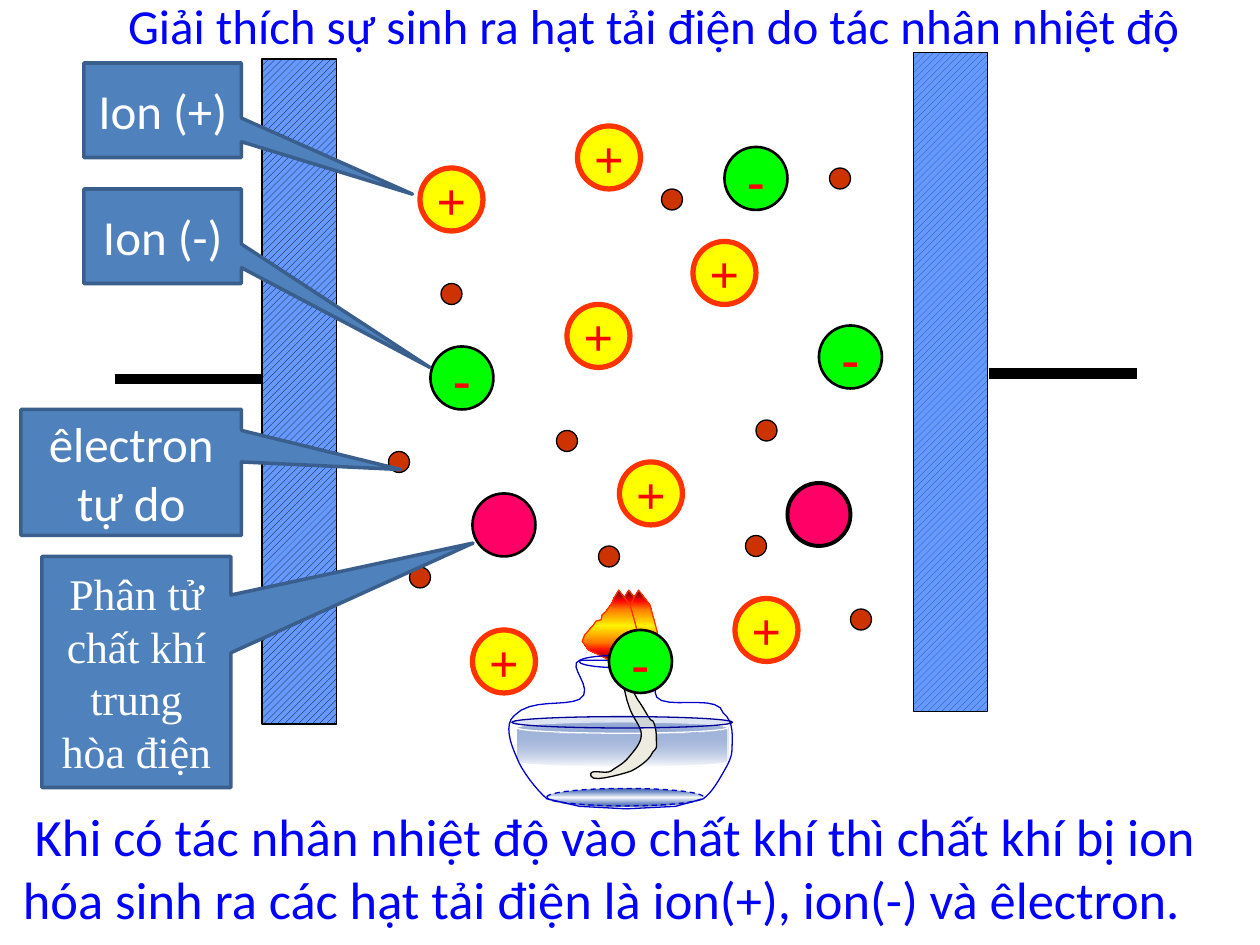
import pptx
import pptx.util
import pptx.dml.color
import pptx.enum.dml
import pptx.enum.shapes
import pptx.enum.text
import pptx.oxml.ns
import lxml.etree

Pt = pptx.util.Pt
qn = pptx.oxml.ns.qn
kinds = pptx.enum.shapes.MSO_SHAPE
mid = pptx.enum.text.MSO_ANCHOR.MIDDLE
top = pptx.enum.text.MSO_ANCHOR.TOP
left = pptx.enum.text.PP_ALIGN.LEFT
center = pptx.enum.text.PP_ALIGN.CENTER


def hue(code):
    return pptx.dml.color.RGBColor.from_string(code)


def paint(shape, fill, line, width):
    """Fill is a hex string, None, or a list of (position, hex, opacity) stops."""
    shape.shadow.inherit = False
    if fill is None:
        shape.fill.background()
    elif isinstance(fill, str):
        shape.fill.solid()
        shape.fill.fore_color.rgb = hue(fill)
    else:
        shape.fill.gradient()
        shape.fill.gradient_angle = 270
        stops = shape._element.spPr.find(qn("a:gradFill")).find(qn("a:gsLst"))
        for old in list(stops):
            stops.remove(old)
        for spot, code, alpha in fill:
            stop = lxml.etree.SubElement(stops, qn("a:gs"), pos=str(spot * 1000))
            tint = lxml.etree.SubElement(stop, qn("a:srgbClr"), val=code)
            lxml.etree.SubElement(tint, qn("a:alpha"), val=str(alpha * 1000))
    shape.line.color.rgb = hue(line)
    shape.line.width = Pt(width)


deck = pptx.Presentation()
deck.slide_width, deck.slide_height = Pt(720), Pt(540)
slide = deck.slides.add_slide(deck.slide_layouts[5])
shapes = slide.shapes
texts = []  # shape, text, font, size, colour, bold, wrap, anchor, align

# Title
title = shapes.title
spots = {"left": 66, "top": -6, "width": 622, "height": 41}
for name, value in spots.items():
    setattr(title, name, Pt(value))
texts.append((title, "Giải thích sự sinh ra hạt tải điện do tác nhân nhiệt độ",
              "Calibri", 28, "0000FF", False, False, top, left))

# Plates and their wires
for x, y, high, ink, start, level in [
        (149.75, 33.75, 380, "000000", 65.5, 216.5),
        (522, 30, 376.5, "1F497D", 565, 213.5)]:
    plate = shapes.add_shape(kinds.RECTANGLE, Pt(x), Pt(y), Pt(42.5), Pt(high))
    paint(plate, "6699FF", "000000", 0.75)
    plate.fill.patterned()
    plate.fill.pattern = pptx.enum.dml.MSO_PATTERN.WIDE_UPWARD_DIAGONAL
    plate.fill.fore_color.rgb = hue(ink)
    plate.fill.back_color.rgb = hue("6699FF")
    wire = shapes.add_connector(pptx.enum.shapes.MSO_CONNECTOR.STRAIGHT,
                                Pt(start), Pt(level), Pt(start + 84.5), Pt(level))
    wire.line.color.rgb = hue("000000")
    wire.line.width = Pt(6)
    lxml.etree.SubElement(wire._element.spPr, qn("a:effectLst"))

# Lamp: liquid and base
liquid = shapes.add_shape(kinds.CAN, Pt(295), Pt(412.5), Pt(121), Pt(26))
paint(liquid, [(0, "003399", 40), (100, "FFFFFF", 100)], "FFFFFF", 0.75)
base = shapes.add_shape(kinds.OVAL, Pt(312.5), Pt(450.5), Pt(89.5), Pt(10))
paint(base, [(0, "003399", 76), (50, "FFFFFF", 100), (100, "003399", 76)],
      "0000CC", 0.75)
base.line.dash_style = pptx.enum.dml.MSO_LINE.DASH

# Lamp: glass and wick; two numbers are a line, six a Bézier curve
glass = [
    (331.2, 377.3), (323.3, 380.2, 340.6, 393.8, 331.2, 399.6),
    (322.6, 403.9, 303.1, 398.9, 293.8, 409), (288, 414, 291.6, 424.8, 295.2, 432.7),
    (298.1, 440.6, 306.7, 451.4, 312.5, 456.5), (331.2, 460.8), (357.8, 462.2),
    (385.9, 460.8), (401.8, 456.5), (406.8, 452.9, 410.4, 446.4, 413.3, 441.4),
    (416.2, 436.3, 418.3, 432.7, 418.3, 427.7),
    (418.3, 421.9, 419.8, 412.6, 413.3, 407.5),
    (411.1, 397.4, 388.1, 403.9, 378, 400.3), (367.9, 396.7, 383, 380.9, 375.8, 377.3)]
wick = [
    (354.2, 373), (353.5, 373.7, 356.4, 396, 359.3, 403.2),
    (361.4, 410.4, 366.5, 414.7, 366.5, 419.8), (366.5, 424.8, 362.2, 429.1, 359.3, 432.7),
    (355.7, 437, 352.8, 437.8, 349.2, 440.6), (345.6, 442.8, 336.2, 438.5, 337.7, 443.5),
    (339.1, 447.8, 360.7, 440.6, 360.7, 440.6), (360.7, 440.6, 370.8, 435.6, 373, 429.8),
    (375.8, 427, 375.1, 427, 375.1, 423.4), (375.1, 420.5, 375.1, 415.4, 373, 411.8),
    (371.5, 412.6, 368.6, 405.4, 364.3, 399.6), (360, 393.1, 355, 373, 354.2, 373)]
# Flame outline, from its own top left corner
flame = [
    (17.3, 41.8), (12.2, 38.9), (4.3, 35.3), (0.7, 30.2), (2.2, 26.6), (7.2, 20.9),
    (8.6, 18.7), (11.5, 18), (12.2, 15.1), (14.4, 13), (18, 7.9), (18.7, 5.8),
    (21.6, 1), (28.1, 9.4), (32.4, 25.2), (31, 33.8), (20.9, 38.2)]
fire = [(0, "4D0808", 100), (15, "FF0300", 100), (27, "FF7A00", 100),
        (50, "FFF200", 100), (73, "FF7A00", 100), (85, "FF0300", 100),
        (100, "4D0808", 100)]
parts = [(glass, None, "0000CC"), (wick, "EEECE1", "000000")]
for x in (337.7, 343.3, 332):
    parts.append(([(x + a, 336.2 + b) for a, b in flame], fire, "FF3300"))

for steps, fill, line in parts:
    dots = [steps[0]]
    for step in steps[1:]:
        if len(step) == 2:
            dots.append(step)
            continue
        ends = [dots[-1], step[:2], step[2:4], step[4:]]
        for n in range(1, 9):
            t = n / 8
            rates = [(1 - t) ** 3, 3 * t * (1 - t) ** 2, 3 * t * t * (1 - t), t ** 3]
            dots.append(tuple(sum(r * e[k] for r, e in zip(rates, ends))
                              for k in (0, 1)))
    # The pen keeps whole units only, so it draws in full-resolution lengths
    dots = [(Pt(x), Pt(y)) for x, y in dots]
    pen = shapes.build_freeform(*dots[0])
    pen.add_line_segments(dots[1:], close=True)
    paint(pen.convert_to_shape(), fill, line, 0.75)

# Lamp: rim and surface
rim = shapes.add_shape(kinds.OVAL, Pt(331), Pt(374.5), Pt(45.5), Pt(7))
paint(rim, None, "0000CC", 0.75)
skin = shapes.add_shape(kinds.OVAL, Pt(292.5), Pt(409.5), Pt(126), Pt(6.5))
paint(skin, [(0, "003399", 13), (100, "003399", 13)], "000099", 0.75)

# Free electrons
for x, y in [(234, 324), (252, 162), (378, 108), (222, 258), (432, 240),
             (426, 306), (486, 348), (342, 312), (318, 246), (474, 96)]:
    dot = shapes.add_shape(kinds.FLOWCHART_CONNECTOR, Pt(x), Pt(y), Pt(12), Pt(12))
    paint(dot, "CC3300", "000000", 0.75)

# Neutral molecules, positive ions, negative ions
for sign, fill, line, width, places in [
        ("", "FF0066", "000000", 1.5, [(270, 282)]),
        ("", "FF0066", "000000", 2.25, [(450, 276)]),
        ("+", "FFFF00", "FF3300", 3,
         [(420, 342), (240, 96), (354, 264), (270, 360), (324, 174), (330, 72),
          (396, 138)]),
        ("-", "00FF00", "000000", 1.5, [(246, 198), (348, 360), (468, 186), (414, 84)])]:
    for x, y in places:
        ball = shapes.add_shape(kinds.OVAL, Pt(x), Pt(y), Pt(36), Pt(36))
        paint(ball, fill, line, width)
        if sign:
            texts.append((ball, sign, "Times New Roman", 30, "FF0000", True, False,
                          mid, center))

# Conclusion
note = shapes.add_textbox(Pt(6), Pt(456), Pt(720), Pt(80))
texts.append((note, " Khi có tác nhân nhiệt độ vào chất khí thì chất khí bị ion hóa sinh ra "
              "các hạt tải điện là ion(+), ion(-) và êlectron.",
              "Calibri", 30, "0000FF", False, True, top, left))

# Callouts
for text, font, size, box, tip in [
        ("Phân tử chất khí trung hòa điện", "Times New Roman", 25,
         (24, 318, 108, 132), (1.781, -0.558)),
        ("êlectron tự do", "Calibri", 28, (12, 234, 126, 72), (1.223, -0.023)),
        ("Ion (+)", "Calibri", 28, (48, 36, 90, 54), (1.586, 0.888)),
        ("Ion (-)", "Calibri", 28, (48, 108, 90, 54), (1.696, 1.388))]:
    call = shapes.add_shape(kinds.RECTANGULAR_CALLOUT, *[Pt(v) for v in box])
    call.adjustments[0], call.adjustments[1] = tip
    paint(call, "4F81BD", "3A5F8C", 2)
    texts.append((call, text, font, size, "FFFFFF", False, True, mid, center))

# Write and format all text
for shape, text, font, size, code, bold, wrap, anchor, align in texts:
    frame = shape.text_frame
    frame.text = text
    frame.word_wrap = wrap
    frame.vertical_anchor = anchor
    para = frame.paragraphs[0]
    para.alignment = align
    run = para.runs[0]
    look = {"name": font, "size": Pt(size), "bold": bold}
    for name, value in look.items():
        setattr(run.font, name, value)
    run.font.color.rgb = hue(code)

deck.save("out.pptx")
